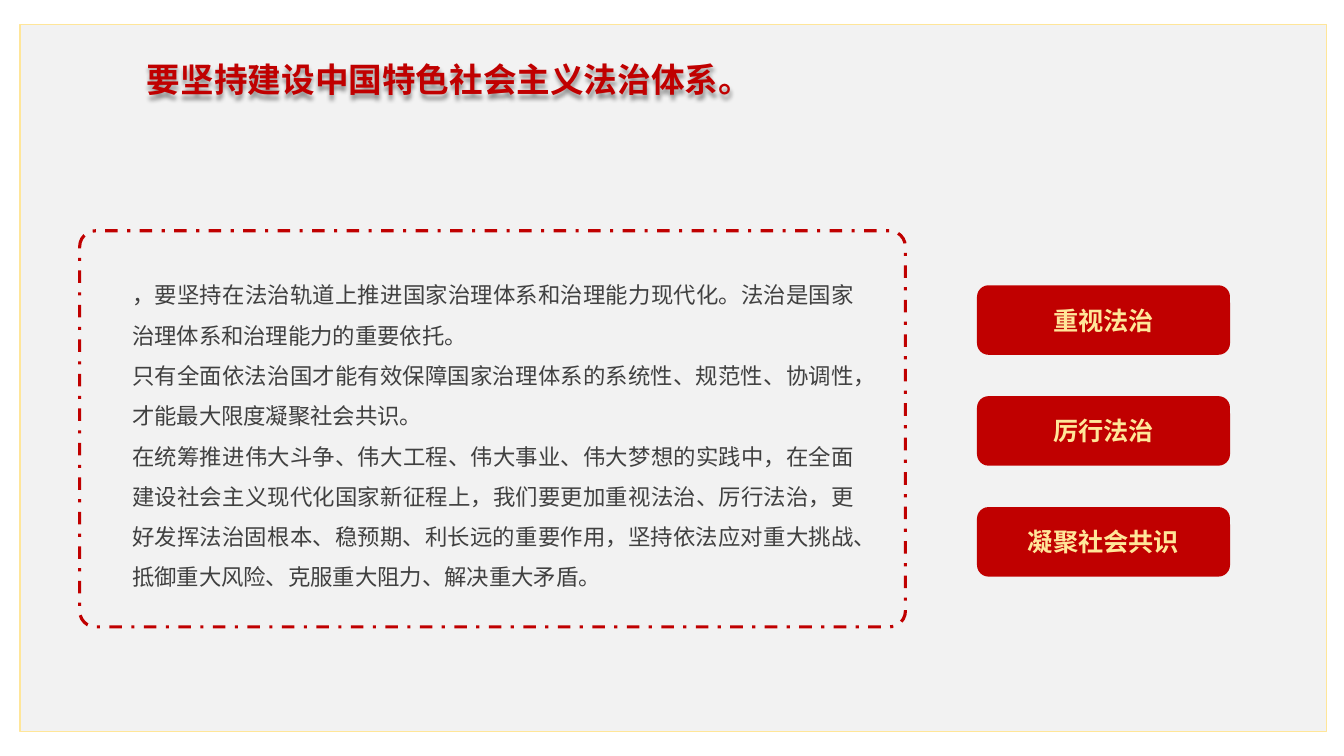
"""Build a slide on the rule of law: title, framed text and three key phrases."""
from dataclasses import dataclass
from typing import Optional

from lxml import etree
from pptx import Presentation
from pptx import util as u
from pptx.dml.color import RGBColor
from pptx.enum import dml, shapes, text
from pptx.oxml.ns import qn

WIDE, HIGH = 13.33, 7.5
FONT = "Noto Sans CJK SC"
HUES = {"red": "C00000", "gold": "FFE699", "pale": "F2F2F2", "ink": "404040"}
TITLE = "要坚持建设中国特色社会主义法治体系。"
BODY = [
    "，要坚持在法治轨道上推进国家治理体系和治理能力现代化。法治是国家治理体系和治理能力的重要依托。",
    "只有全面依法治国才能有效保障国家治理体系的系统性、规范性、协调性，才能最大限度凝聚社会共识。",
    "在统筹推进伟大斗争、伟大工程、伟大事业、伟大梦想的实践中，在全面建设社会主义现代化国家新征程上，"
    "我们要更加重视法治、厉行法治，更好发挥法治固根本、稳预期、利长远的重要作用，"
    "坚持依法应对重大挑战、抵御重大风险、克服重大阻力、解决重大矛盾。",
]
KEYS = ["重视法治", "厉行法治", "凝聚社会共识"]
KEY_TOP, KEY_STEP = 37.73, 14.67


@dataclass
class Area:
    """A place on the slide, in percent of its width and height."""
    left: float
    top: float
    width: float
    height: float

    def place(self) -> tuple:
        """Return the place as lengths for python-pptx."""
        return (u.Inches(WIDE * self.left / 100), u.Inches(HIGH * self.top / 100),
                u.Inches(WIDE * self.width / 100), u.Inches(HIGH * self.height / 100))


@dataclass
class Panel:
    """A preset shape with its fill and outline."""
    area: Area
    kind: shapes.MSO_SHAPE = shapes.MSO_SHAPE.ROUNDED_RECTANGLE
    fill: Optional[str] = None
    line: Optional[str] = None
    weight: float = 1
    dash: Optional[dml.MSO_LINE] = None
    bend: Optional[float] = None


@dataclass
class Style:
    """The look of a text."""
    size: float
    hue: str
    bold: bool = False
    align: text.PP_ALIGN = text.PP_ALIGN.LEFT
    space: float = 1


def hue(name: str) -> RGBColor:
    """Look up a colour."""
    return RGBColor.from_string(HUES[name])


def draw(slide, panel: Panel):
    """Draw a panel."""
    shape = slide.shapes.add_shape(panel.kind, *panel.area.place())
    shape.shadow.inherit = False
    if panel.bend is not None:
        shape.adjustments[0] = panel.bend
    if panel.fill:
        shape.fill.solid()
        shape.fill.fore_color.rgb = hue(panel.fill)
    else:
        shape.fill.background()
    if panel.line:
        shape.line.color.rgb = hue(panel.line)
        shape.line.width = u.Pt(panel.weight)
        if panel.dash:
            shape.line.dash_style = panel.dash
    else:
        shape.line.fill.background()
    return shape


def write(shape, lines: list[str], style: Style) -> None:
    """Fill a shape with styled paragraphs."""
    frame = shape.text_frame
    frame.word_wrap = True
    frame.text = "\n".join(lines)
    for para in frame.paragraphs:
        para.alignment = style.align
        para.line_spacing = style.space
        for run in para.runs:
            font = run.font
            font.size, font.bold, font.name = u.Pt(style.size), style.bold, FONT
            font.color.rgb = hue(style.hue)
            etree.SubElement(font._element, qn("a:ea"), typeface=FONT)


def shade(shape) -> None:
    """Cast a soft shadow below the text of an unfilled box."""
    shape.fill.background()
    group = etree.SubElement(shape._element.spPr, qn("a:effectLst"))
    cast = etree.SubElement(group, qn("a:outerShdw"), blurRad="38100", dist="38100",
                            dir="5400000", algn="t", rotWithShape="0")
    tone = etree.SubElement(cast, qn("a:srgbClr"), val="000000")
    etree.SubElement(tone, qn("a:alpha"), val="40000")


def main() -> None:
    """Build and save the slide."""
    deck = Presentation()
    deck.slide_width, deck.slide_height = u.Inches(WIDE), u.Inches(HIGH)
    slide = deck.slides.add_slide(deck.slide_layouts[6])
    draw(slide, Panel(Area(1.5, 3.2, 97.22, 93.6), shapes.MSO_SHAPE.RECTANGLE,
                      "pale", "gold"))

    title = slide.shapes.add_textbox(*Area(10.2, 7.07, 45.76, 6.67).place())
    write(title, [TITLE], Style(24, "red", True))
    shade(title)

    body = slide.shapes.add_textbox(*Area(9.83, 35.47, 53.79, 42.53).place())
    frame = body.text_frame
    frame.margin_left = frame.margin_right = frame.margin_top = frame.margin_bottom = 0
    write(body, BODY, Style(16, "ink", align=text.PP_ALIGN.JUSTIFY, space=1.5))

    draw(slide, Panel(Area(5.93, 30.53, 61.44, 52.4), line="red", weight=2.25,
                      dash=dml.MSO_LINE.DASH_DOT, bend=0.04))

    label = Style(18, "gold", True, text.PP_ALIGN.CENTER)
    for row, key in enumerate(KEYS):
        area = Area(72.69, KEY_TOP + row * KEY_STEP, 18.83, 9.2)
        button = draw(slide, Panel(area, fill="red"))
        button.text_frame.vertical_anchor = text.MSO_ANCHOR.MIDDLE
        write(button, [key], label)

    deck.save("out.pptx")


if __name__ == "__main__":
    main()
